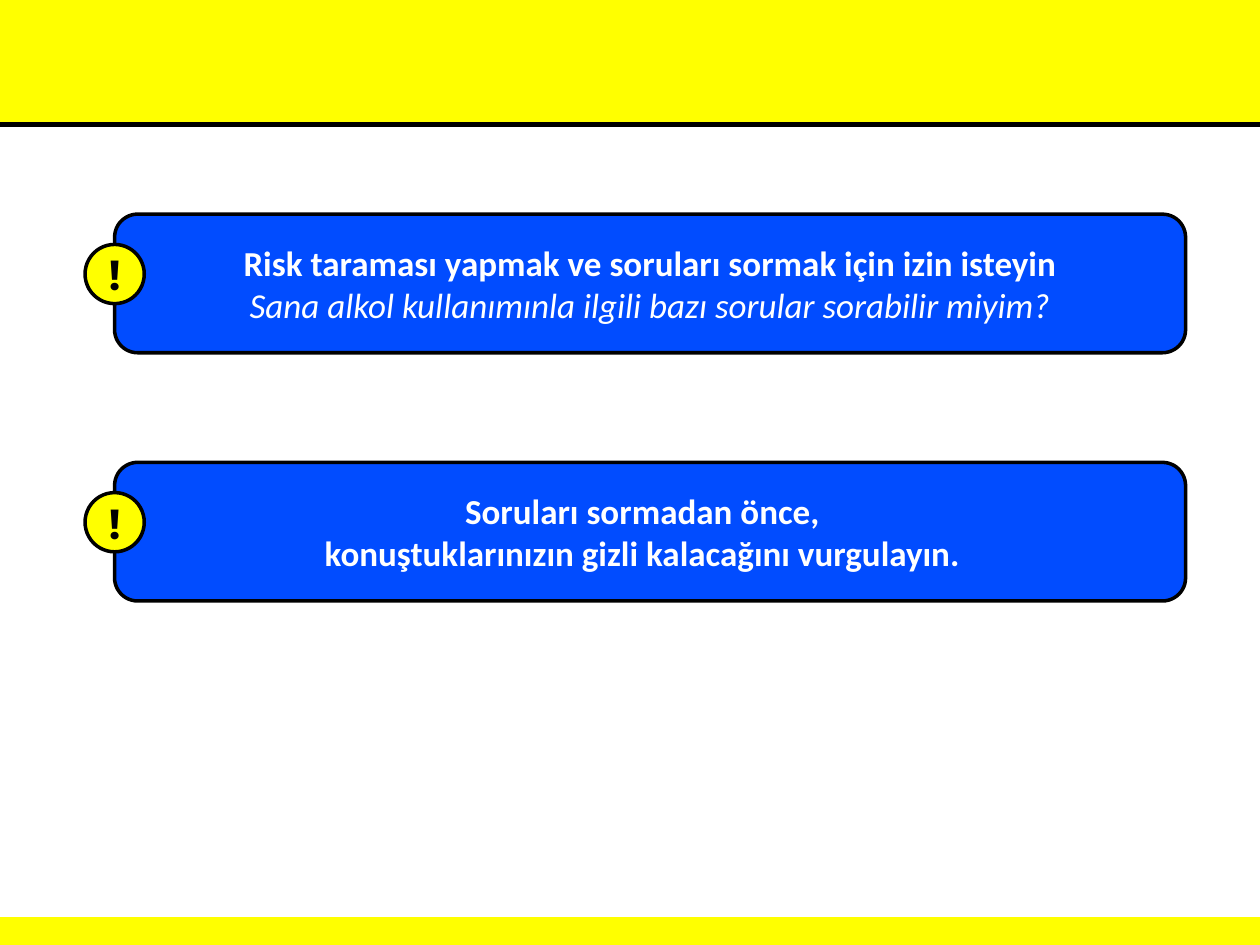
from dataclasses import dataclass

import pptx
import pptx.dml.color
import pptx.enum.shapes
import pptx.enum.text
import pptx.util
from lxml import etree
from pptx.util import Inches

SHAPES = pptx.enum.shapes.MSO_SHAPE


@dataclass(frozen=True)
class Theme:
    yellow: str = "FFFF00"
    blue: str = "014CFF"
    black: str = "000000"
    white: str = "FFFFFF"
    text_font: str = "Calibri"
    mark_font: str = "Montserrat"
    text_size: int = 20
    mark_size: int = 24
    outline: int = 2
    rule: int = 3


THEME = Theme()


def rgb(value):
    return pptx.dml.color.RGBColor.from_string(value)


def add_filled_shape(page, kind, left, top, width, height, fill, line):
    shape = page.shapes.add_shape(
        kind, Inches(left), Inches(top), Inches(width), Inches(height))
    shape.shadow.inherit = False
    shape.fill.solid()
    shape.fill.fore_color.rgb = rgb(fill)
    shape.line.color.rgb = rgb(line)
    shape.line.width = pptx.util.Pt(THEME.outline)
    return shape


def add_rule(page, top, width):
    rule = page.shapes.add_connector(
        pptx.enum.shapes.MSO_CONNECTOR.STRAIGHT,
        0, Inches(top), Inches(width), Inches(top))
    rule.line.color.rgb = rgb(THEME.black)
    rule.line.width = pptx.util.Pt(THEME.rule)
    etree.SubElement(rule._element.spPr, pptx.oxml.ns.qn("a:effectLst"))


def write_lines(shape, lines, font, size, color):
    """Write centred lines, each given as (text, is_italic); upright ones are bold."""
    frame = shape.text_frame
    frame.vertical_anchor = pptx.enum.text.MSO_ANCHOR.MIDDLE
    frame.text = "\n".join(text for text, _ in lines)
    for para, (_, italic) in zip(frame.paragraphs, lines):
        para.alignment = pptx.enum.text.PP_ALIGN.CENTER
        for span in para.runs:
            span.font.name = font
            span.font.size = pptx.util.Pt(size)
            span.font.color.rgb = rgb(color)
            span.font.bold = not italic
            span.font.italic = italic


def add_callout(page, top, lines, right_inset=0.1):
    """Add a message box with an exclamation badge on its left edge."""
    left, badge_size = 0.91, 0.47
    box = add_filled_shape(page, SHAPES.ROUNDED_RECTANGLE, left, top, 8.5, 1.1,
                           THEME.blue, THEME.black)
    box.text_frame.margin_right = Inches(right_inset)
    write_lines(box, lines, THEME.text_font, THEME.text_size, THEME.white)

    badge = add_filled_shape(page, SHAPES.OVAL, left - badge_size / 2, top + 0.24,
                             badge_size, badge_size, THEME.yellow, THEME.black)
    frame = badge.text_frame
    frame.margin_left = frame.margin_right = 0
    frame.margin_top = frame.margin_bottom = 0
    frame.word_wrap = False
    write_lines(badge, [("!", False)], THEME.mark_font, THEME.mark_size, THEME.black)


def main():
    width, height = 10, 7.5
    header, footer = 0.99, 0.21
    deck = pptx.Presentation()
    deck.slide_width, deck.slide_height = Inches(width), Inches(height)
    page = deck.slides.add_slide(deck.slide_layouts[6])

    for top, band in ((0, header), (height - footer, footer)):
        add_filled_shape(page, SHAPES.RECTANGLE, 0, top, width, band,
                         THEME.yellow, THEME.yellow)
    add_rule(page, header, width)

    add_callout(page, 1.7, [
        ("Risk taraması yapmak ve soruları sormak için izin isteyin", False),
        ("Sana alkol kullanımınla ilgili bazı sorular sorabilir miyim?", True),
    ])
    add_callout(page, 3.67, [
        ("Soruları sormadan önce,", False),
        ("konuştuklarınızın gizli kalacağını vurgulayın.", False),
    ], right_inset=0.22)

    deck.save("out.pptx")


if __name__ == "__main__":
    main()
